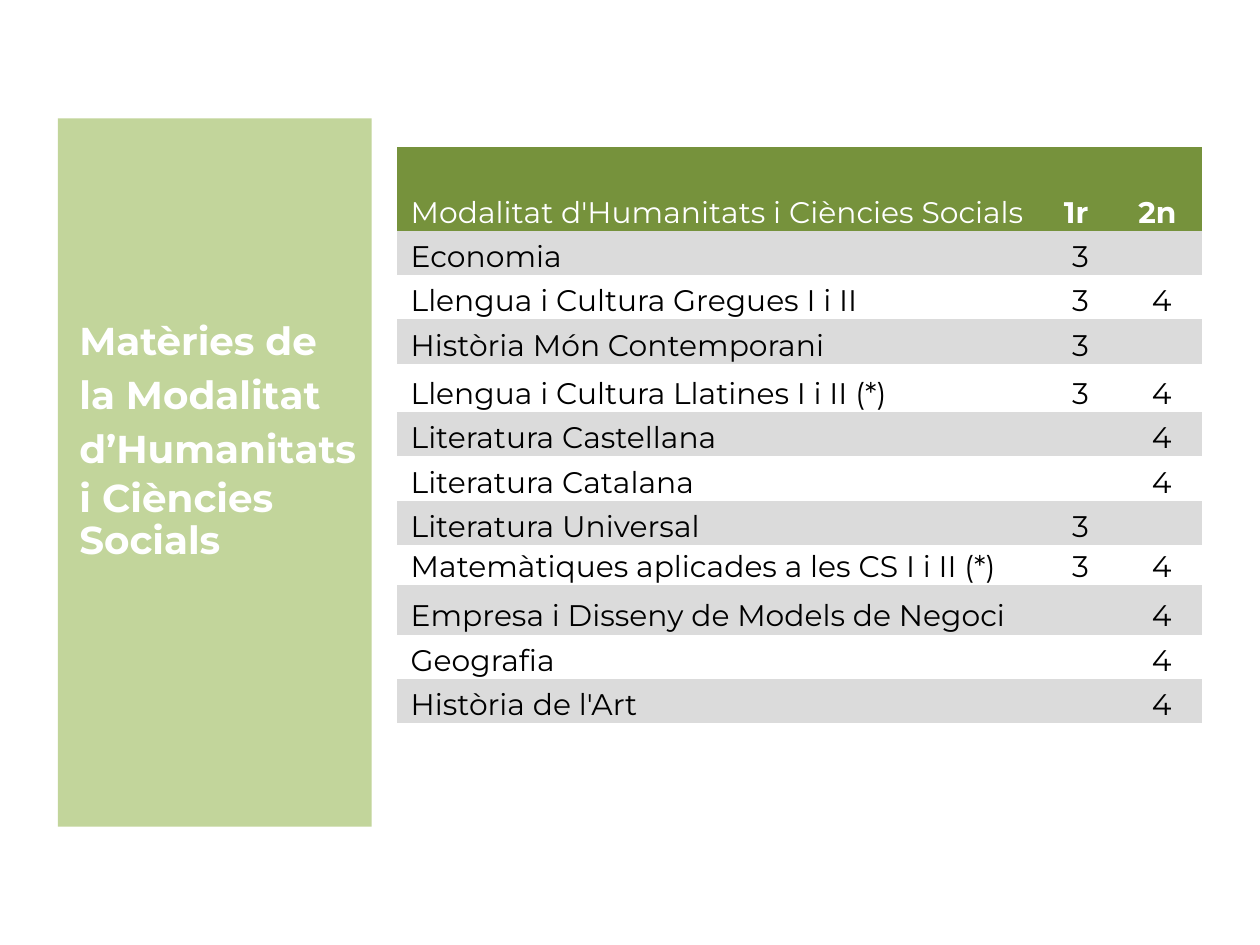
from dataclasses import dataclass

from pptx import Presentation
from pptx.dml.color import RGBColor
from pptx.enum.text import MSO_ANCHOR as Anchor, MSO_AUTO_SIZE as AutoSize, PP_ALIGN as Align
from pptx.oxml.ns import qn
from pptx.util import Inches, Pt


@dataclass(frozen=True)
class Theme:
    font: str = "Montserrat"
    title_size: float = 22.2
    table_size: float = 17
    panel: str = "C2D59B"
    header: str = "76923C"
    band: str = "DBDBDB"
    light: str = "FFFFFF"
    dark: str = "000000"
    plain_table_style: str = "{2D5ABB26-0587-4C30-8999-92F81FD0307C}"


class SlideBuilder:
    def __init__(self, slide, theme):
        self.slide = slide
        self.theme = theme

    def set_font(self, paragraph, size, color, bold=False):
        font = paragraph.font
        font.name = self.theme.font
        font.size = Pt(size)
        font.bold = bold
        font.color.rgb = RGBColor.from_string(color)

    def title_panel(self, lines, left, top, width, height):
        title = self.slide.shapes.title
        title.left, title.top = Inches(left), Inches(top)
        title.width, title.height = Inches(width), Inches(height)
        title.fill.solid()
        title.fill.fore_color.rgb = RGBColor.from_string(self.theme.panel)
        frame = title.text_frame
        frame.auto_size = AutoSize.NONE
        frame.word_wrap = True
        frame.vertical_anchor = Anchor.TOP
        frame.margin_left, frame.margin_right = Inches(0.17), Inches(0.08)
        frame.margin_top, frame.margin_bottom = Inches(1.52), Inches(0.04)
        frame.text = "\n".join(text for text, _, _ in lines)
        for paragraph, (_, spacing, before) in zip(frame.paragraphs, lines):
            paragraph.alignment = Align.LEFT
            paragraph.line_spacing = spacing
            paragraph.space_before = Pt(before)
            self.set_font(paragraph, self.theme.title_size, self.theme.light, True)

    def table(self, rows, left, top, widths, heights):
        frame = self.slide.shapes.add_table(
            len(rows), len(widths), Inches(left), Inches(top),
            Inches(sum(widths)), Inches(sum(heights)))
        table = frame.table
        table.horz_banding = False
        table._tbl.tblPr.find(qn("a:tableStyleId")).text = self.theme.plain_table_style
        for column, width in zip(table.columns, widths):
            column.width = Inches(width)
        for row, height in zip(table.rows, heights):
            row.height = Inches(height)
        for row_index, values in enumerate(rows):
            for column_index, value in enumerate(values):
                self.cell(table.cell(row_index, column_index), value, row_index, column_index)

    def cell(self, cell, value, row_index, column_index):
        is_header = row_index == 0
        is_number = column_index > 0
        cell.margin_left = cell.margin_right = Inches(0.11)
        cell.margin_top = cell.margin_bottom = 0
        cell.vertical_anchor = Anchor.BOTTOM
        if is_header or row_index % 2:
            cell.fill.solid()
            fill = self.theme.header if is_header else self.theme.band
            cell.fill.fore_color.rgb = RGBColor.from_string(fill)
        else:
            cell.fill.background()
        cell.text = value
        paragraph = cell.text_frame.paragraphs[0]
        paragraph.alignment = Align.CENTER if is_number else Align.LEFT
        color = self.theme.light if is_header else self.theme.dark
        self.set_font(paragraph, self.theme.table_size, color, is_header and is_number)


TITLE_LINES = [
    ("Matèries de la Modalitat d’Humanitats", 1.15, 0),
    ("i Ciències Socials", 0.9, 4.5),
]
SUBJECT_ROWS = [
    ("Modalitat d'Humanitats i Ciències Socials", "1r ", "2n "),
    ("Economia", "3", ""),
    ("Llengua i Cultura Gregues I i II", "3", "4"),
    ("Història Món Contemporani", "3", ""),
    ("Llengua i Cultura Llatines I i II (*)", "3", "4"),
    ("Literatura Castellana", "", "4"),
    ("Literatura Catalana", "", "4"),
    ("Literatura Universal", "3", ""),
    ("Matemàtiques aplicades a les CS I i II (*)", "3", "4"),
    ("Empresa i Disseny de Models de Negoci", "", "4"),
    ("Geografia", "", "4"),
    ("Història de l'Art", "", "4"),
]
COLUMN_WIDTHS = [5.1, 0.65, 0.64]
SPECIAL_HEIGHTS = {0: 0.66, 4: 0.38, 8: 0.32, 9: 0.39}


def main():
    presentation = Presentation()
    presentation.slide_width, presentation.slide_height = Inches(10), Inches(7.5)
    slide = presentation.slides.add_slide(presentation.slide_layouts[5])
    builder = SlideBuilder(slide, Theme())
    builder.title_panel(TITLE_LINES, 0.46, 0.94, 2.49, 5.62)
    heights = [SPECIAL_HEIGHTS.get(index, 0.353) for index in range(len(SUBJECT_ROWS))]
    builder.table(SUBJECT_ROWS, 3.15, 1.17, COLUMN_WIDTHS, heights)
    presentation.save("out.pptx")


if __name__ == "__main__":
    main()
